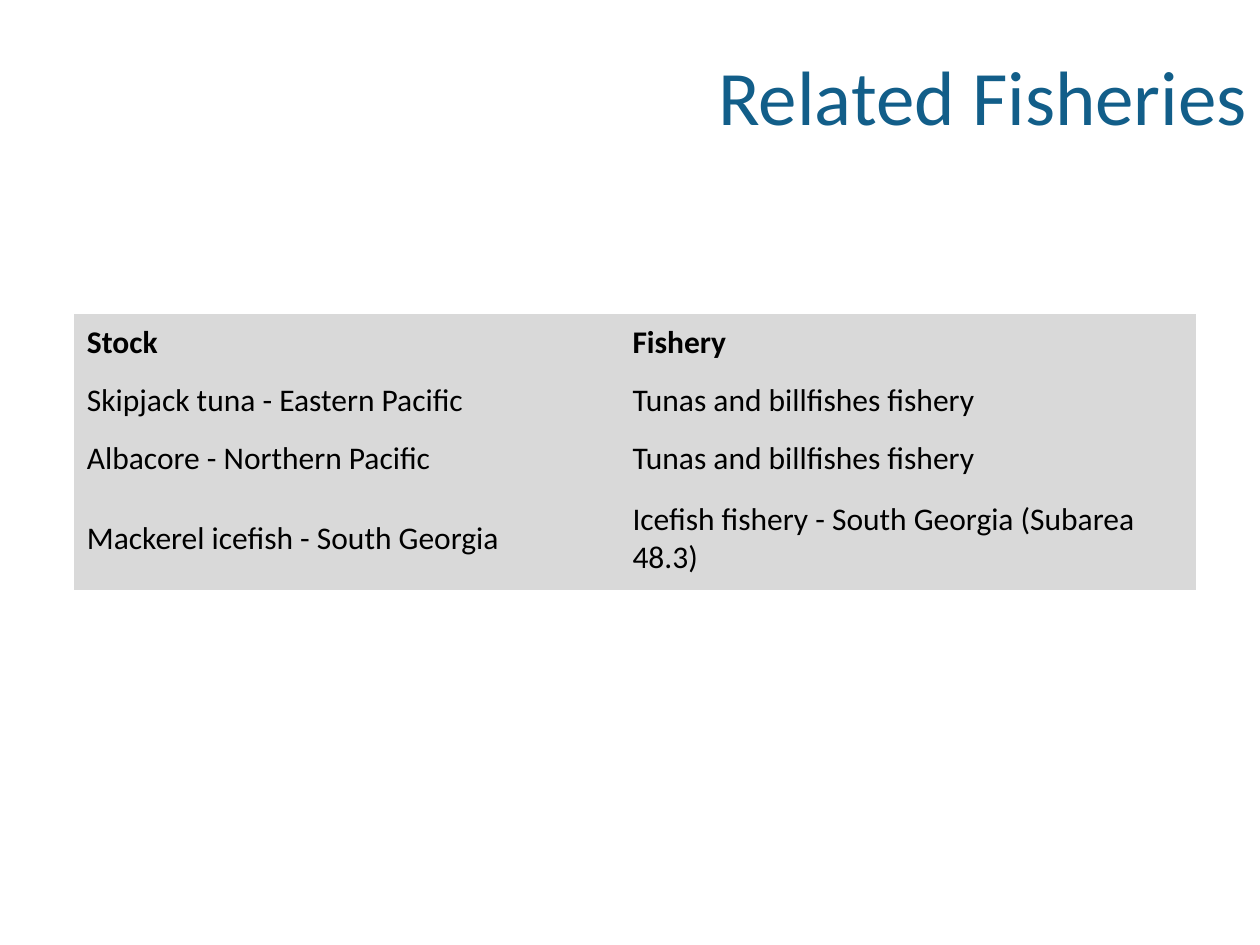
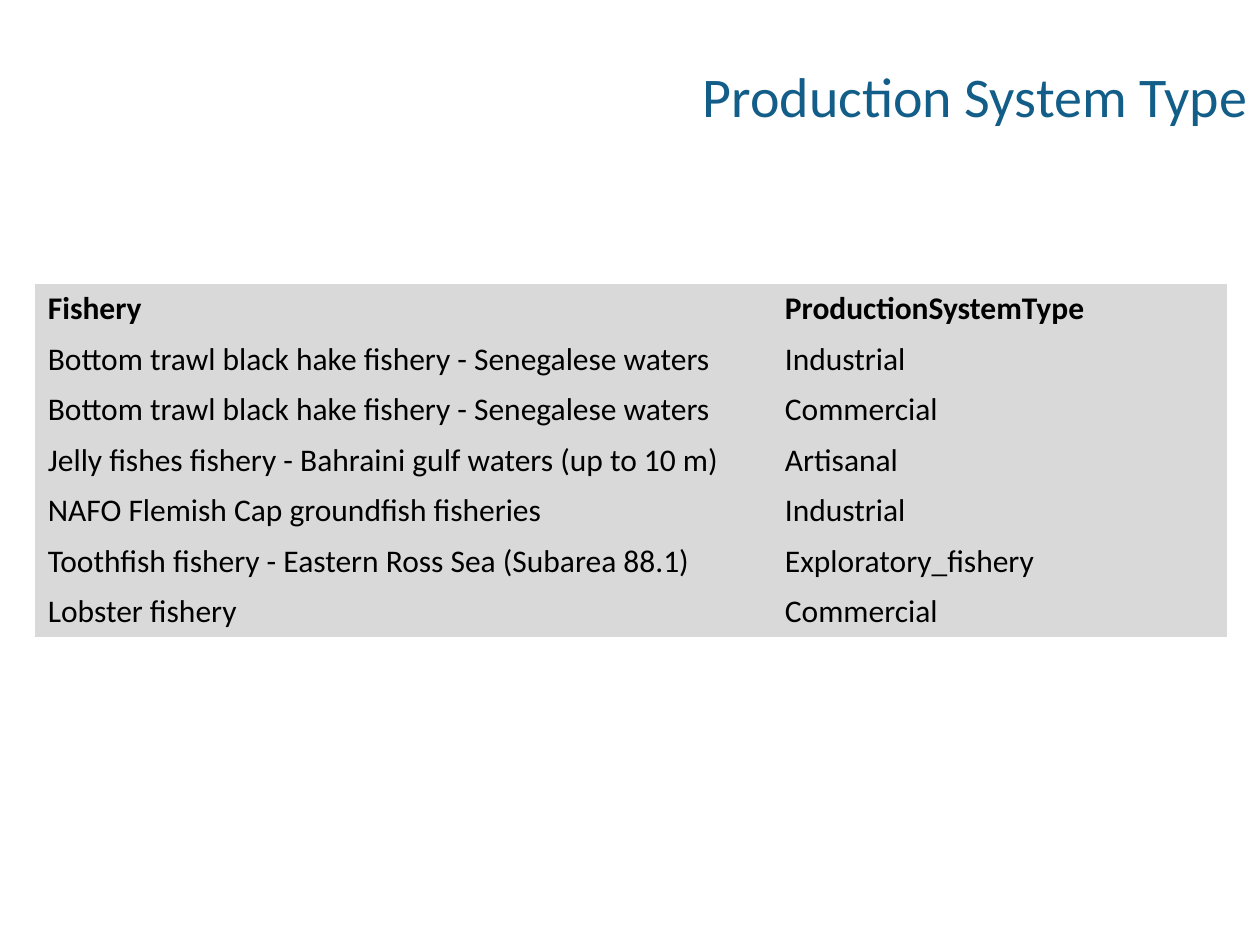
from pptx import Presentation
from pptx.dml.color import RGBColor
from pptx.enum.text import MSO_ANCHOR, PP_ALIGN
from pptx.oxml.ns import qn
from pptx.util import Inches, Pt

SLIDE_WIDTH, SLIDE_HEIGHT = 10, 7.5
TITLE_LEFT, TITLE_TOP, TITLE_HEIGHT = 2.83, 0.13, 1.25
FONT = "Calibri"
BLUE = RGBColor(0x12, 0x5E, 0x89)
BLACK = RGBColor(0x00, 0x00, 0x00)
GREY = RGBColor(0xD9, 0xD9, 0xD9)
PLAIN_TABLE_STYLE = "{2D5ABB26-0587-4C30-8999-92F81FD0307C}"

RELATED_FISHERIES = [
    ("Stock", "Fishery"),
    ("Skipjack tuna - Eastern Pacific", "Tunas and billfishes fishery"),
    ("Albacore - Northern Pacific", "Tunas and billfishes fishery"),
    ("Mackerel icefish - South Georgia",
     "Icefish fishery - South Georgia (Subarea 48.3)"),
]
PRODUCTION_SYSTEMS = [
    ("Fishery", "ProductionSystemType"),
    ("Bottom trawl black hake fishery - Senegalese waters", "Industrial"),
    ("Bottom trawl black hake fishery - Senegalese waters", "Commercial"),
    ("Jelly fishes fishery - Bahraini gulf waters (up to 10 m)", "Artisanal"),
    ("NAFO Flemish Cap groundfish fisheries", "Industrial"),
    ("Toothfish fishery - Eastern Ross Sea (Subarea 88.1)",
     "Exploratory_fishery"),
    ("Lobster fishery", "Commercial"),
]


def write_text(text_frame, text, size=18, color=BLACK, bold=False,
               align=PP_ALIGN.LEFT):
    text_frame.word_wrap = True
    paragraph = text_frame.paragraphs[0]
    paragraph.alignment = align
    run = paragraph.add_run()
    run.text = text
    run.font.name = FONT
    run.font.size = Pt(size)
    run.font.bold = bold
    run.font.color.rgb = color


def add_title(slide, text, size):
    box = slide.shapes.add_textbox(
        Inches(TITLE_LEFT), Inches(TITLE_TOP),
        Inches(SLIDE_WIDTH - TITLE_LEFT), Inches(TITLE_HEIGHT))
    box.text_frame.vertical_anchor = MSO_ANCHOR.MIDDLE
    write_text(box.text_frame, text, size=size, color=BLUE,
               align=PP_ALIGN.RIGHT)


def add_grey_table(slide, records, left, top, column_widths, row_heights):
    """Add a borderless table whose first record is a bold header."""
    frame = slide.shapes.add_table(
        len(records), len(column_widths), Inches(left), Inches(top),
        Inches(sum(column_widths)), Inches(sum(row_heights)))
    for style in frame.element.iter(qn("a:tableStyleId")):
        style.text = PLAIN_TABLE_STYLE
    table = frame.table
    table.horz_banding = False
    for column, width in zip(table.columns, column_widths):
        column.width = Inches(width)
    for row_index, (row, height) in enumerate(zip(table.rows, row_heights)):
        row.height = Inches(height)
        for cell, text in zip(row.cells, records[row_index]):
            cell.fill.solid()
            cell.fill.fore_color.rgb = GREY
            cell.vertical_anchor = MSO_ANCHOR.MIDDLE
            write_text(cell.text_frame, text, bold=row_index == 0)


def add_table_slide(presentation, title, title_size, records, **table_layout):
    slide = presentation.slides.add_slide(presentation.slide_layouts[6])
    add_title(slide, title, title_size)
    add_grey_table(slide, records, **table_layout)


def main():
    presentation = Presentation()
    presentation.slide_width = Inches(SLIDE_WIDTH)
    presentation.slide_height = Inches(SLIDE_HEIGHT)
    add_table_slide(
        presentation, "Related Fisheries", 44, RELATED_FISHERIES,
        left=0.59, top=2.49, column_widths=[4.33, 4.57],
        row_heights=[0.46] * 3 + [0.81])
    add_table_slide(
        presentation, "Production System Type", 32, PRODUCTION_SYSTEMS,
        left=0.28, top=2.25, column_widths=[5.85, 3.61],
        row_heights=[0.4] * len(PRODUCTION_SYSTEMS))
    presentation.save("out.pptx")


if __name__ == "__main__":
    main()
